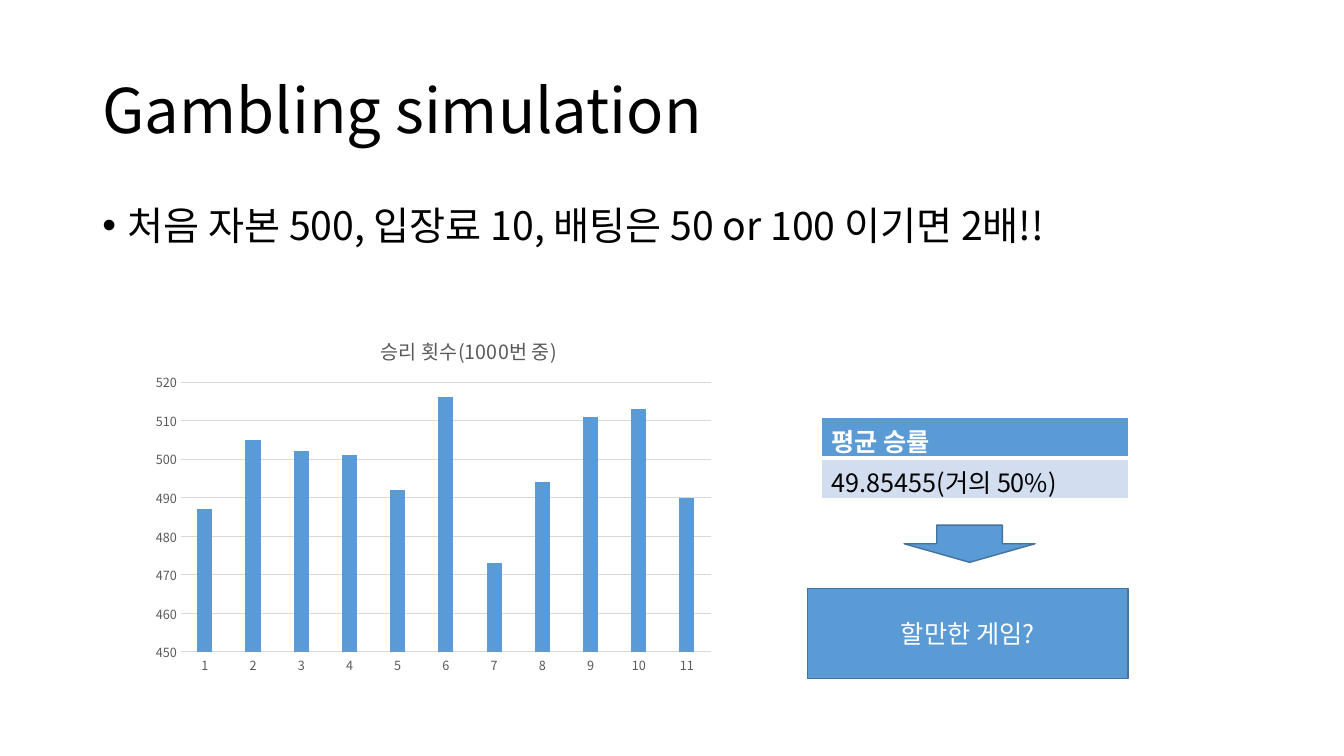
import pptx
import pptx.util
import pptx.chart.data
import pptx.dml.color
import pptx.enum.chart
import pptx.enum.shapes
import pptx.enum.text
import pptx.oxml
import pptx.oxml.ns
from lxml import etree

Pt = pptx.util.Pt
RGBColor = pptx.dml.color.RGBColor
Align = pptx.enum.text.PP_ALIGN
Anchor = pptx.enum.text.MSO_ANCHOR
ShapeKind = pptx.enum.shapes.MSO_SHAPE
qn = pptx.oxml.ns.qn

FONT = "Noto Sans CJK KR"
BLACK = RGBColor(0x00, 0x00, 0x00)
WHITE = RGBColor(0xFF, 0xFF, 0xFF)
BLUE = RGBColor(0x5B, 0x9B, 0xD5)
DARK_BLUE = RGBColor(0x43, 0x73, 0x9E)
PALE_BLUE = RGBColor(0xD2, 0xDE, 0xEF)
GRID_GRAY = RGBColor(0xD9, 0xD9, 0xD9)
LABEL_GRAY = RGBColor(0x59, 0x59, 0x59)

WINS = (487, 505, 502, 501, 492, 516, 473, 494, 511, 513, 490)


def place(shape, left, top, width, height):
    shape.left, shape.top = Pt(left), Pt(top)
    shape.width, shape.height = Pt(width), Pt(height)


def style_font(font, size, color, bold=False):
    font.name, font.size, font.bold = FONT, Pt(size), bold
    font.color.rgb = color


def write_text(frame, text, size=18, color=BLACK, bold=False, align=Align.LEFT,
               anchor=Anchor.TOP, line_spacing=None, space_before=None):
    frame.word_wrap = True
    frame.vertical_anchor = anchor
    paragraph = frame.paragraphs[0]
    paragraph.alignment = align
    paragraph.line_spacing = line_spacing
    paragraph.space_before = space_before
    run = paragraph.add_run()
    run.text = text
    style_font(run.font, size, color, bold)
    east_asian = etree.SubElement(run.font._element, qn("a:ea"))
    east_asian.set("typeface", FONT)
    return paragraph


def add_bullet(slide, text, left, top, width, height):
    box = slide.shapes.add_textbox(Pt(left), Pt(top), Pt(width), Pt(height))
    paragraph = write_text(box.text_frame, text, size=28, line_spacing=0.9, space_before=Pt(10))
    properties = paragraph._p.get_or_add_pPr()
    properties.set("marL", str(Pt(18)))
    properties.set("indent", str(-Pt(18)))
    etree.SubElement(properties, qn("a:buFont")).set("typeface", "Arial")
    etree.SubElement(properties, qn("a:buChar")).set("char", "•")


def add_block(slide, kind, left, top, width, height):
    shape = slide.shapes.add_shape(kind, Pt(left), Pt(top), Pt(width), Pt(height))
    shape.shadow.inherit = False
    shape.fill.solid()
    shape.fill.fore_color.rgb = BLUE
    shape.line.color.rgb = DARK_BLUE
    shape.line.width = Pt(1)
    return shape


def set_layout(parent, index, inner=False, **fractions):
    for layout in parent.findall(qn("c:layout")):
        parent.remove(layout)
    layout = etree.Element(qn("c:layout"))
    manual = etree.SubElement(layout, qn("c:manualLayout"))
    if inner:
        etree.SubElement(manual, qn("c:layoutTarget")).set("val", "inner")
    for mode in ("xMode", "yMode"):
        etree.SubElement(manual, qn("c:" + mode)).set("val", "edge")
    for name, value in fractions.items():
        etree.SubElement(manual, qn("c:" + name)).set("val", str(value))
    parent.insert(index, layout)


def style_axis(axis):
    axis.major_tick_mark = pptx.enum.chart.XL_TICK_MARK.NONE
    axis.minor_tick_mark = pptx.enum.chart.XL_TICK_MARK.NONE
    style_font(axis.tick_labels.font, 9, LABEL_GRAY)


def style_rule(line):
    line.color.rgb = GRID_GRAY
    line.width = Pt(0.75)


def add_wins_chart(slide, left, top, width, height):
    data = pptx.chart.data.CategoryChartData()
    data.categories = [str(number) for number in range(1, len(WINS) + 1)]
    data.add_series("Series 1", WINS)
    chart = slide.shapes.add_chart(
        pptx.enum.chart.XL_CHART_TYPE.COLUMN_CLUSTERED,
        Pt(left), Pt(top), Pt(width), Pt(height), data).chart
    style_font(chart.font, 10, BLACK)
    chart.has_legend = False
    chart.has_title = True
    write_text(chart.chart_title.text_frame, "승리 횟수(1000번 중)", size=14, color=LABEL_GRAY)
    chart.chart_title.include_in_layout = False
    set_layout(chart.chart_title._element, 1, x=0.4, y=0.04)
    plot = chart.plots[0]
    set_layout(plot._element.getparent(), 0, inner=True, x=0.06, y=0.18, w=0.92, h=0.74)
    plot.gap_width, plot.overlap = 219, -27
    plot.vary_by_categories = False
    fill = plot.series[0].format.fill
    fill.solid()
    fill.fore_color.rgb = BLUE
    category_axis, value_axis = chart.category_axis, chart.value_axis
    style_axis(category_axis)
    style_axis(value_axis)
    style_rule(category_axis.format.line)
    style_rule(value_axis.major_gridlines.format.line)
    value_axis.format.line.fill.background()
    value_axis.minimum_scale, value_axis.maximum_scale = 450, 520
    value_axis.major_unit = 10


def set_border(cell, side, width):
    border = pptx.oxml.parse_xml(
        f'<a:{side} xmlns:a="http://schemas.openxmlformats.org/drawingml/2006/main" w="{Pt(width)}">'
        f'<a:solidFill><a:srgbClr val="{WHITE}"/></a:solidFill></a:{side}>')
    properties = cell._tc.get_or_add_tcPr()
    position = len(properties.findall("*")) - 1
    properties.insert(position, border)


def add_rate_table(slide, left, top, width, height):
    table = slide.shapes.add_table(2, 1, Pt(left), Pt(top), Pt(width), Pt(height)).table
    rows = (("평균 승률", WHITE, BLUE, True, 1, 3),
            ("49.85455(거의 50%)", BLACK, PALE_BLUE, False, 3, 1))
    for index, (text, color, fill, bold, top_width, bottom_width) in enumerate(rows):
        cell = table.cell(index, 0)
        write_text(cell.text_frame, text, color=color, bold=bold)
        cell.fill.solid()
        cell.fill.fore_color.rgb = fill
        for side, line_width in (("lnL", 1), ("lnR", 1), ("lnT", top_width), ("lnB", bottom_width)):
            set_border(cell, side, line_width)


def main():
    presentation = pptx.Presentation()
    presentation.slide_width, presentation.slide_height = Pt(960), Pt(540)
    slide = presentation.slides.add_slide(presentation.slide_layouts.get_by_name("Title Only"))
    title = slide.shapes.title
    place(title, 66, 28.75, 828, 104.4)
    write_text(title.text_frame, "Gambling simulation", size=44,
               anchor=Anchor.MIDDLE, line_spacing=0.9)
    add_bullet(slide, "처음 자본 500, 입장료 10, 배팅은 50 or 100 이기면 2배!!", 66, 143.75, 828, 342.6)
    add_wins_chart(slide, 104.4, 226, 411.8, 260.6)
    add_rate_table(slide, 586.8, 298, 219.6, 58.4)
    verdict = add_block(slide, ShapeKind.RECTANGLE, 576.7, 420.5, 229, 64)
    write_text(verdict.text_frame, "할만한 게임?", color=WHITE,
               align=Align.CENTER, anchor=Anchor.MIDDLE)
    add_block(slide, ShapeKind.DOWN_ARROW, 645.8, 375.1, 93.6, 26.6)
    presentation.save("out.pptx")


if __name__ == "__main__":
    main()
